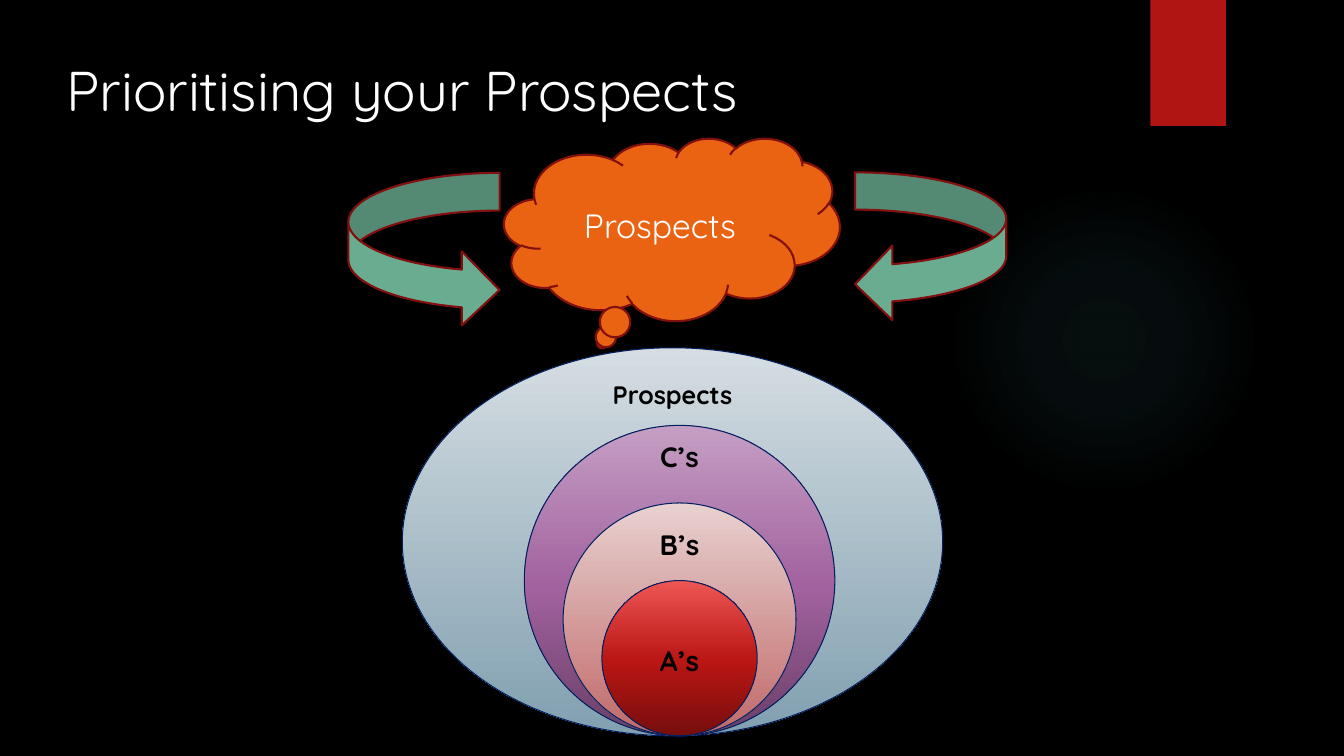
from lxml import etree
from pptx import Presentation
from pptx import util as u
from pptx.dml.color import RGBColor
from pptx.enum import shapes, text
from pptx.oxml.ns import qn

COLORS = {
    "background": "000000", "white": "FFFFFF", "black": "000000",
    "glow": "50B9C1", "ribbon": "B01513", "arrow": "6AAC90",
    "cloud": "EA6312", "outline": "82100E", "ring": "002060",
}
RING_STEP = 0.77
RING_BOTTOM = 7.3
RINGS = [
    ("Prospects", 6.67, 5.36, 5, 3.93, 18, 90, [(0, "D5DDE2"), (100, "81A0B0")]),
    ("C’s", 6.74, None, 4, 4.55, 20, 270, [(0, "6A3F68"), (48, "A2629F"), (100, "C59EC3")]),
    ("B’s", 6.74, None, 3, 5.42, 20, 90, [(0, "E8D1D0"), (100, "C06969")]),
    ("A’s", 6.74, None, 2, 6.57, 20, 270, [(0, "760E0D"), (48, "B91614"), (100, "ED5654")]),
]


class SlideBuilder:
    """Draw styled elements on the current slide."""

    font_name = "Quicksand"

    def __init__(self, slide):
        self.slide = slide
        self.background(COLORS["background"])

    def background(self, color):
        fill = self.slide.background.fill
        fill.solid()
        fill.fore_color.rgb = RGBColor.from_string(color)

    def shape(self, kind, box, fill=None, line=None, width=1.5):
        shape = self.slide.shapes.add_shape(kind, *map(u.Inches, box))
        shape.shadow.inherit = False
        if fill:
            shape.fill.solid()
            shape.fill.fore_color.rgb = RGBColor.from_string(fill)
        if line:
            shape.line.color.rgb = RGBColor.from_string(line)
            shape.line.width = u.Pt(width)
        else:
            shape.line.fill.background()
        return shape

    def gradient(self, shape, stops, angle=None):
        shape.fill.gradient()
        gradient = shape.element.spPr.find(qn("a:gradFill"))
        for child in list(gradient):
            gradient.remove(child)
        stop_list = etree.SubElement(gradient, qn("a:gsLst"))
        for position, color, *alpha in stops:
            stop = etree.SubElement(stop_list, qn("a:gs"), pos=str(position * 1000))
            tone = etree.SubElement(stop, qn("a:srgbClr"), val=color)
            for value in alpha:
                etree.SubElement(tone, qn("a:alpha"), val=str(value * 1000))
        if angle is None:
            radial = etree.SubElement(gradient, qn("a:path"), {"path": "circle"})
            etree.SubElement(radial, qn("a:fillToRect"), dict.fromkeys("ltrb", "50000"))
        else:
            etree.SubElement(gradient, qn("a:lin"), ang=str(angle * 60000), scaled="0")

    def label(self, shape, words, size, color, bold=False, paragraph_format=None, frame_format=None):
        frame = shape.text_frame
        paragraph = frame.paragraphs[0]
        paragraph.text = words
        font_format = {"name": self.font_name, "size": u.Pt(size), "bold": bold}
        for target, values in (
            (frame, {"word_wrap": True, **(frame_format or {})}),
            (paragraph, paragraph_format or {}),
            (paragraph.font, font_format),
        ):
            for name, value in values.items():
                setattr(target, name, value)
        paragraph.font.color.rgb = RGBColor.from_string(color)

    def text_box(self, box, *content, **formats):
        shape = self.slide.shapes.add_textbox(*map(u.Inches, box))
        self.label(shape, *content, **formats)

    def ring(self, words, center, width, steps, text_center, size, angle, stops):
        height = steps * RING_STEP
        width = width or height
        box = (center - width / 2, RING_BOTTOM - height, width, height)
        ellipse = self.shape(shapes.MSO_SHAPE.OVAL, box, line=COLORS["ring"], width=0.75)
        self.gradient(ellipse, stops, angle)
        margins = dict.fromkeys(("margin_left", "margin_top", "margin_right", "margin_bottom"), 0)
        self.text_box(
            (center - 0.75, text_center - 0.25, 1.5, 0.5), words, size, COLORS["black"], bold=True,
            paragraph_format={"alignment": text.PP_ALIGN.CENTER, "line_spacing": 0.9},
            frame_format={"vertical_anchor": text.MSO_ANCHOR.MIDDLE, **margins},
        )

    def curved_arrow(self, box, rotation, adjustment=None, flipped=False):
        arrow = self.shape(
            shapes.MSO_SHAPE.CURVED_DOWN_ARROW, box, COLORS["arrow"], COLORS["outline"])
        arrow.rotation = rotation
        if adjustment:
            arrow.adjustments[1] = adjustment
        if flipped:
            arrow.element.spPr.find(qn("a:xfrm")).set("flipH", "1")


def main():
    presentation = Presentation()
    presentation.slide_width = u.Inches(13.33)
    presentation.slide_height = u.Inches(7.5)
    builder = SlideBuilder(presentation.slides.add_slide(presentation.slide_layouts[6]))

    glow = builder.shape(shapes.MSO_SHAPE.OVAL, (9.41, 1.83, 3.08, 3.08))
    builder.gradient(glow, [(position, COLORS["glow"], alpha)
                            for position, alpha in ((0, 7), (36, 6), (69, 0))])
    builder.shape(shapes.MSO_SHAPE.RECTANGLE, (11.41, 0, 0.75, 1.25), COLORS["ribbon"])

    builder.curved_arrow((8.49, 1.7, 1.48, 1.5), 90)
    builder.curved_arrow((3.44, 1.73, 1.53, 1.5), 270, adjustment=0.49, flipped=True)
    cloud = builder.shape(
        shapes.MSO_SHAPE.CLOUD_CALLOUT, (5, 1.37, 3.33, 1.81), COLORS["cloud"], COLORS["outline"])
    builder.label(
        cloud, "Prospects", 24, COLORS["white"],
        paragraph_format={"alignment": text.PP_ALIGN.CENTER},
        frame_format={"vertical_anchor": text.MSO_ANCHOR.MIDDLE},
    )

    for ring in RINGS:
        builder.ring(*ring)
    builder.text_box((0.56, 0.5, 9.67, 0.77), "Prioritising your Prospects", 40, COLORS["white"])

    presentation.save("out.pptx")


if __name__ == "__main__":
    main()
